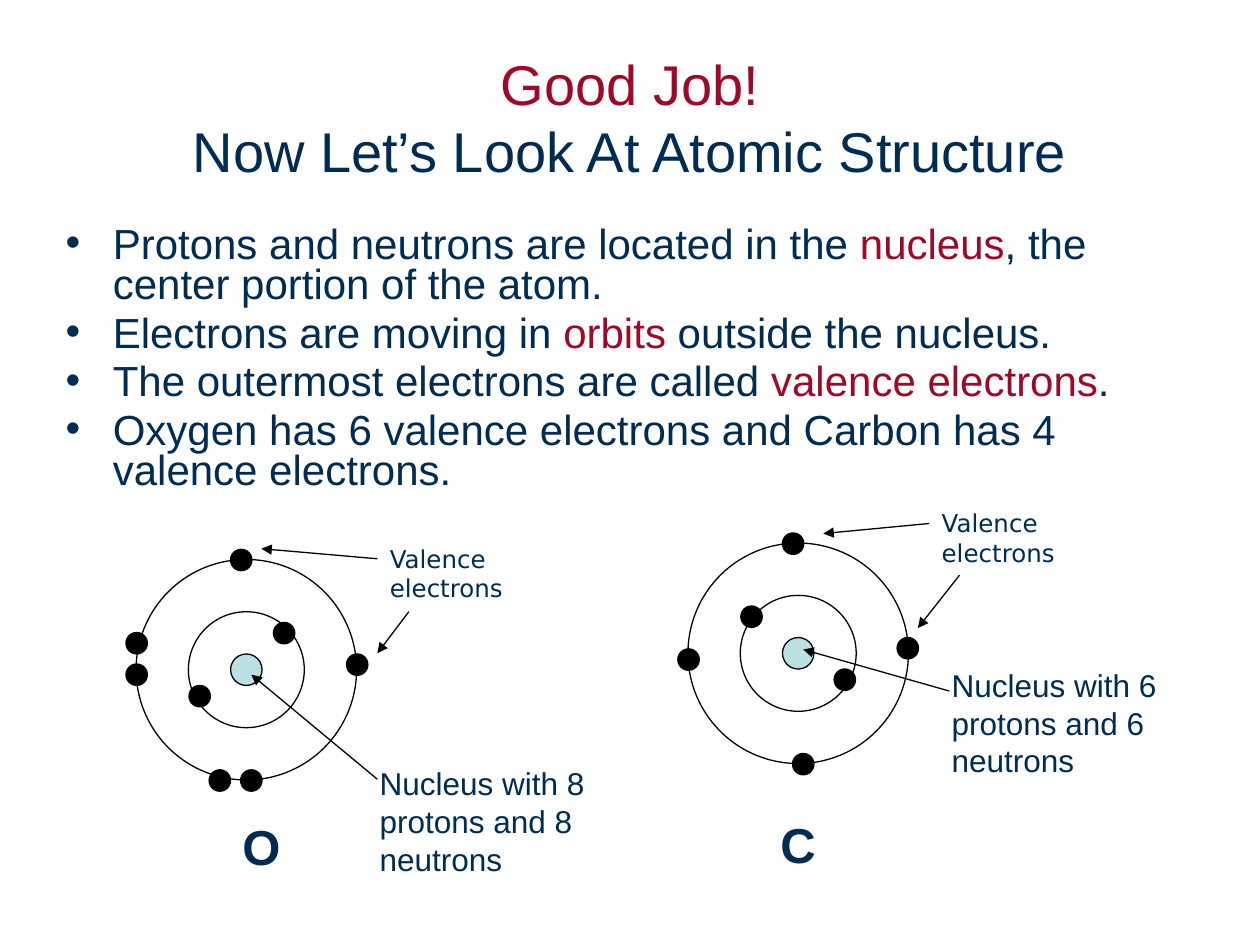
from dataclasses import dataclass

from lxml import etree
from pptx import Presentation
from pptx.dml.color import RGBColor
from pptx.enum import shapes, text
from pptx.oxml import ns
from pptx.util import Inches, Pt


@dataclass(frozen=True)
class Theme:
    """Colours, fonts and type sizes of the slide."""
    navy: str = "002B52"
    red: str = "9E0927"
    black: str = "000000"
    white: str = "FFFFFF"
    nucleus: str = "BBE0E3"
    font: str = "Arial"
    label_font: str = "DejaVu Sans"
    title: float = 32
    body: float = 24
    symbol: float = 28
    caption: float = 18
    label: float = 14
    line: float = 0.75


THEME = Theme()
TITLE = [("Good Job!", THEME.red), ("Now Let’s Look At Atomic Structure", THEME.navy)]
BULLETS = [
    ("Protons and neutrons are located in the ", "nucleus", ", the center portion of the atom."),
    ("Electrons are moving in ", "orbits", " outside the nucleus."),
    ("The outermost electrons are called ", "valence electrons", "."),
    ("Oxygen has 6 valence electrons and Carbon has 4 valence electrons.",),
]
OXYGEN = {
    "electrons": [(-0.37, 0.21), (0.3, -0.29), (-0.87, 0.04), (-0.04, -0.87),
                  (0.88, -0.04), (0.04, 0.88), (-0.87, -0.21), (-0.21, 0.88)],
    "arrows": [(1.04, -0.88, 0.12, -0.96), (1.29, -0.46, 1.04, -0.13), (1.04, 0.87, 0.04, 0.04)],
    "symbol": ("O", -0.13, 1.12, 0.75, 0.57),
    "valence": ("Valence electrons", 1.04, -1.05, 1.25, 0.57),
    "caption": ("Nucleus with 8 protons and 8 neutrons", 0.96, 0.7, 2, 1),
}
CARBON = {
    "electrons": [(-0.37, -0.29), (0.37, 0.21), (-0.87, 0.05), (-0.04, -0.87),
                  (0.87, -0.04), (0.04, 0.88)],
    "arrows": [(1.04, -1.03, 0.2, -0.95), (1.28, -0.62, 0.95, -0.2), (1.2, 0.3, 0.04, -0.03)],
    "symbol": ("C", -0.24, 1.23, 0.83, 0.57),
    "valence": ("Valence electrons", 1.04, -1.2, 1.25, 0.57),
    "caption": ("Nucleus with 6 protons and 6 neutrons", 1.12, 0.05, 1.83, 1),
}
LABEL_STYLES = {
    "symbol": (THEME.symbol, THEME.font, True),
    "valence": (THEME.label, THEME.label_font, False),
    "caption": (THEME.caption, THEME.font, False),
}


def apply_format(target, values):
    """Set each named attribute on the target."""
    for name, value in values.items():
        setattr(target, name, value)


def place(shape, box):
    """Move and size a shape to a box given in inches."""
    names = ("left", "top", "width", "height")
    apply_format(shape, {name: Inches(value) for name, value in zip(names, box)})


def add_run(paragraph, words, size, color=THEME.navy, font=THEME.font, bold=False):
    """Append a formatted run to a paragraph."""
    run = paragraph.add_run()
    run.text = words
    apply_format(run.font, {"size": Pt(size), "name": font, "bold": bold})
    run.font.color.rgb = RGBColor.from_string(color)


def fill_title(shape, box):
    """Write the two-line title in its placeholder."""
    place(shape, box)
    apply_format(shape.text_frame, {"auto_size": text.MSO_AUTO_SIZE.NONE,
                                    "vertical_anchor": text.MSO_ANCHOR.MIDDLE})
    paragraph = shape.text_frame.paragraphs[0]
    paragraph.alignment = text.PP_ALIGN.CENTER
    for index, (words, color) in enumerate(TITLE):
        if index:
            paragraph.add_line_break()
        add_run(paragraph, words, THEME.title, color)


def fill_body(shape, box):
    """Write the bullets, with the middle part of each in red."""
    place(shape, box)
    frame = shape.text_frame
    frame.auto_size = text.MSO_AUTO_SIZE.NONE
    for index, parts in enumerate(BULLETS):
        paragraph = frame.add_paragraph() if index else frame.paragraphs[0]
        apply_format(paragraph, {"line_spacing": 0.8, "space_before": Pt(THEME.body * 0.2)})
        for words, color in zip(parts, (THEME.navy, THEME.red, THEME.navy)):
            add_run(paragraph, words, THEME.body, color)


def add_circle(slide, x, y, diameter, color):
    """Draw an outlined circle around a centre point."""
    radius = diameter / 2
    circle = slide.shapes.add_shape(shapes.MSO_SHAPE.OVAL, Inches(x - radius), Inches(y - radius),
                                    Inches(diameter), Inches(diameter))
    circle.shadow.inherit = False
    circle.fill.solid()
    circle.fill.fore_color.rgb = RGBColor.from_string(color)
    circle.line.color.rgb = RGBColor.from_string(THEME.black)
    circle.line.width = Pt(THEME.line)


def add_arrow(slide, *points):
    """Draw a thin line with an arrowhead at its end."""
    arrow = slide.shapes.add_connector(shapes.MSO_CONNECTOR.STRAIGHT, *map(Inches, points))
    arrow.line.color.rgb = RGBColor.from_string(THEME.black)
    arrow.line.width = Pt(THEME.line)
    etree.SubElement(arrow.line._get_or_add_ln(), ns.qn("a:tailEnd"), type="triangle")
    etree.SubElement(arrow._element.spPr, ns.qn("a:effectLst"))


def add_label(slide, words, box, style):
    """Add a wrapped text box in a label style."""
    size, font, bold = style
    frame = slide.shapes.add_textbox(*map(Inches, box)).text_frame
    frame.word_wrap = True
    add_run(frame.paragraphs[0], words, size, font=font, bold=bold)


def add_atom(slide, box, atom):
    """Draw an atom whose outer orbit fills the box, with its labels."""
    left, top, width, height = box
    x, y = left + width / 2, top + height / 2
    for diameter, color in ((width, THEME.white), (0.92, THEME.white), (0.25, THEME.nucleus)):
        add_circle(slide, x, y, diameter, color)
    for dx, dy in atom["electrons"]:
        add_circle(slide, x + dx, y + dy, 0.17, THEME.black)
    for x1, y1, x2, y2 in atom["arrows"]:
        add_arrow(slide, x + x1, y + y1, x + x2, y + y2)
    for name, style in LABEL_STYLES.items():
        words, dx, dy, label_width, label_height = atom[name]
        add_label(slide, words, (x + dx, y + dy, label_width, label_height), style)


def main():
    """Build and save the slide."""
    presentation = Presentation()
    apply_format(presentation, {"slide_width": Inches(10), "slide_height": Inches(7.5)})
    slide = presentation.slides.add_slide(presentation.slide_layouts[1])
    fill_title(slide.shapes.title, (0.5, 0.3, 9, 1.25))
    fill_body(slide.placeholders[1], (0.42, 1.75, 9, 1.83))
    add_atom(slide, (1.08, 4.44, 1.75, 1.75), OXYGEN)
    add_atom(slide, (5.46, 4.31, 1.75, 1.75), CARBON)
    presentation.save("out.pptx")


if __name__ == "__main__":
    main()
